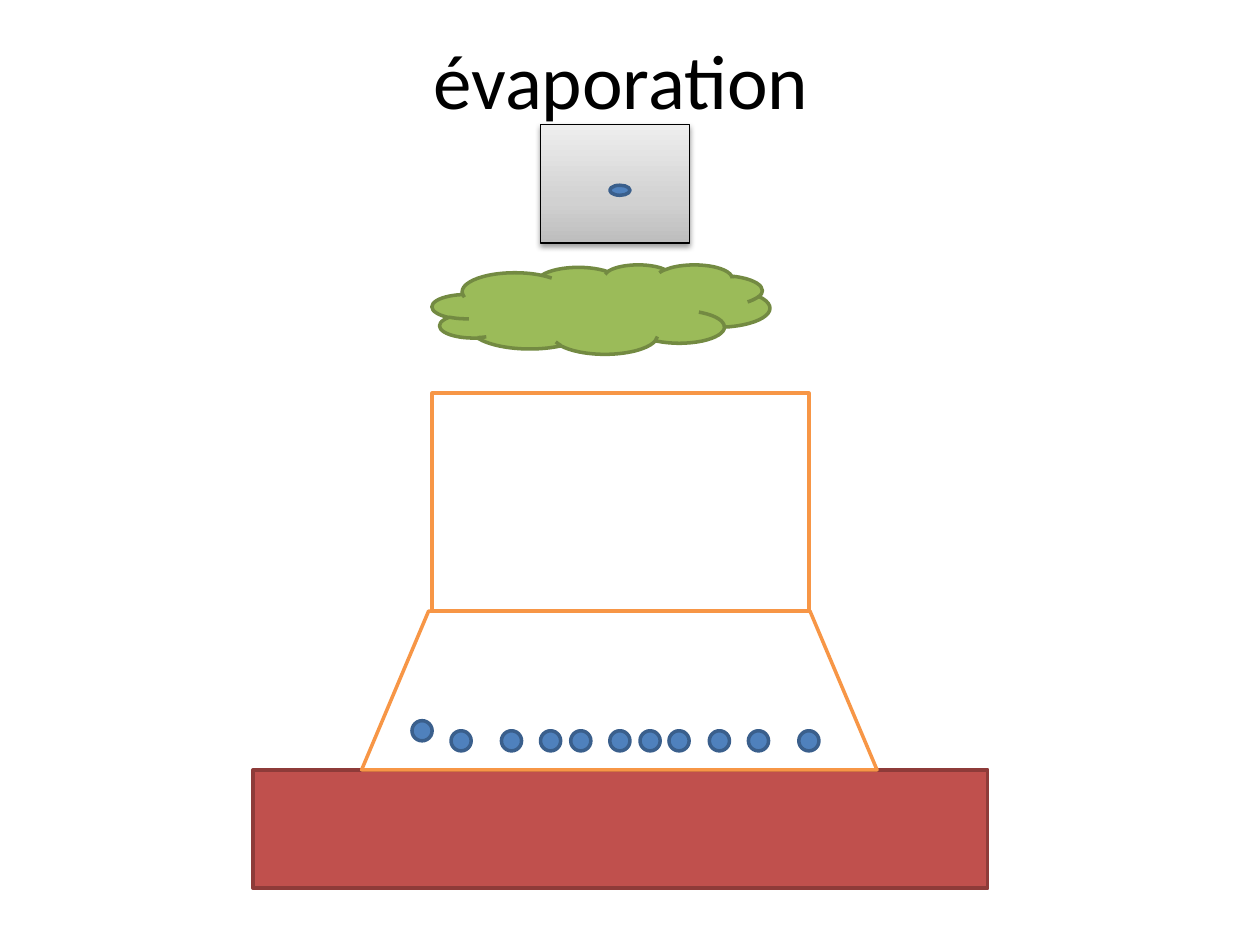
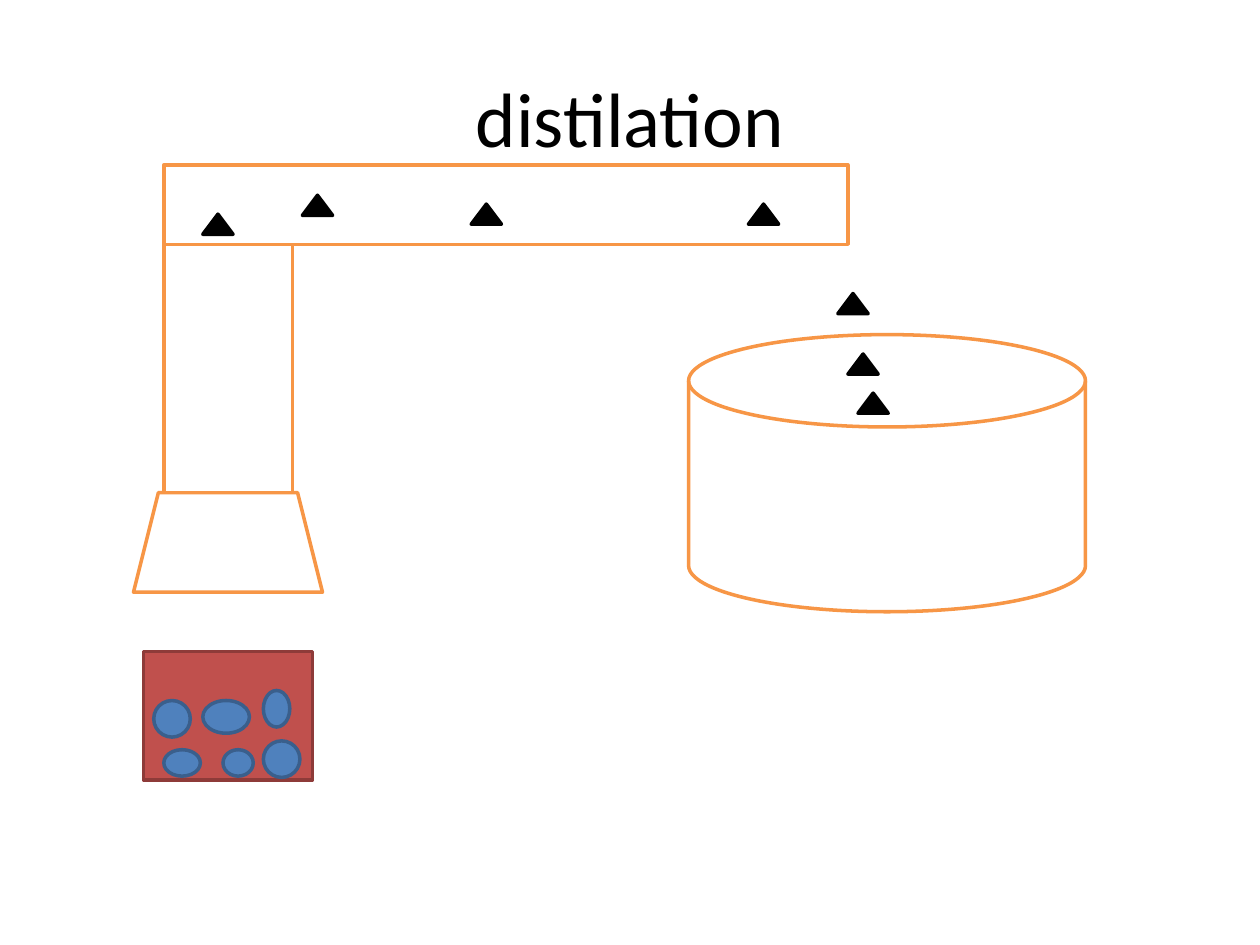
import pptx
import pptx.util
import pptx.dml.color
import pptx.enum.shapes
import pptx.enum.text
import pptx.oxml
import pptx.oxml.ns
import copy
from dataclasses import dataclass

Inches = pptx.util.Inches
Kind = pptx.enum.shapes.MSO_SHAPE


@dataclass(frozen=True)
class Theme:
    # Each look is a pair of fill and line colours
    heater: tuple = ("C0504D", "8E3B39")
    vessel: tuple = ("FFFFFF", "F79646")
    water: tuple = ("4F81BD", "3A5F8C")
    cloud: tuple = ("9BBB59", "738A42")
    vapour: tuple = ("000000", "000000")
    ink: str = "000000"
    steel: tuple = ((0, "BDBDBD"), (0.35, "D1D1D1"), (1, "EEEEEE"))
    font: str = "Calibri"
    title_size: int = 44
    outline: float = 2
    thin: float = 0.75


theme = Theme()
color = pptx.dml.color.RGBColor.from_string


def add_text(page, text, left, top, width, height, size=theme.title_size, ink=theme.ink):
    box = page.shapes.add_textbox(Inches(left), Inches(top), Inches(width), Inches(height))
    frame = box.text_frame
    frame.word_wrap = True
    frame.vertical_anchor = pptx.enum.text.MSO_ANCHOR.MIDDLE
    para = frame.paragraphs[0]
    para.alignment = pptx.enum.text.PP_ALIGN.CENTER
    span = para.add_run()
    span.text = text
    span.font.name = theme.font
    span.font.size = pptx.util.Pt(size)
    span.font.color.rgb = color(ink)


def add_part(page, kind, look, left, top, width, height):
    part = page.shapes.add_shape(kind, Inches(left), Inches(top), Inches(width), Inches(height))
    part.shadow.inherit = False
    fill, line = look
    part.fill.solid()
    part.fill.fore_color.rgb = color(fill)
    part.line.color.rgb = color(line)
    part.line.width = pptx.util.Pt(theme.outline)
    return part


deck = pptx.Presentation()
deck.slide_width = Inches(10)
deck.slide_height = Inches(7.5)
blank = deck.slide_layouts[6]

# Slide 1: evaporation
page = deck.slides.add_slide(blank)
add_text(page, "évaporation", 0.43, 0, 9, 1.25)

# Heater and vessel
add_part(page, Kind.RECTANGLE, theme.heater, 2.01, 6.11, 5.83, 0.94)
base = add_part(page, Kind.TRAPEZOID, theme.vessel, 2.87, 4.85, 4.09, 1.26)
base.adjustments[0] = 0.422
add_part(page, Kind.RECTANGLE, theme.vessel, 3.43, 3.12, 2.99, 1.73)

# Row of drops, the first one a little higher
drop = 0.16
add_part(page, Kind.OVAL, theme.water, 3.27, 5.72, drop, drop)
for left in (3.58, 3.98, 4.29, 4.53, 4.84, 5.08, 5.31, 5.63, 5.94, 6.34):
    add_part(page, Kind.OVAL, theme.water, left, 5.8, drop, drop)

# Steel plate with gradient and soft shadow
plate = add_part(page, Kind.RECTANGLE, theme.vessel, 4.29, 0.99, 1.18, 0.94)
plate.line.color.rgb = color(theme.ink)
plate.line.width = pptx.util.Pt(theme.thin)
plate.fill.gradient()
plate.fill.gradient_angle = 90
first_stop = plate._element.xpath(".//a:gs")[0]
first_stop.addnext(copy.deepcopy(first_stop))
for stop, (position, tone) in zip(plate.fill.gradient_stops, theme.steel):
    stop.position = position
    stop.color.rgb = color(tone)
plate._element.xpath(".//a:effectLst")[0].append(pptx.oxml.parse_xml(
    f'<a:outerShdw {pptx.oxml.ns.nsdecls("a")} blurRad="40000" dist="20000" dir="5400000" '
    f'rotWithShape="0"><a:srgbClr val="{theme.ink}"><a:alpha val="38000"/></a:srgbClr></a:outerShdw>'))

# Drop on the plate, and the cloud
add_part(page, Kind.OVAL, theme.water, 4.84, 1.47, drop, drop / 2)
add_part(page, Kind.CLOUD, theme.cloud, 3.43, 2.1, 2.68, 0.71)

# Slide 2: distillation
page = deck.slides.add_slide(blank)
add_text(page, "distilation", 0.5, 0.3, 9, 1.25)

# Heater, still, pipe and collecting drum
add_part(page, Kind.RECTANGLE, theme.heater, 1.14, 5.17, 1.34, 1.02)
add_part(page, Kind.TRAPEZOID, theme.vessel, 1.06, 3.91, 1.5, 0.79)
add_part(page, Kind.RECTANGLE, theme.vessel, 1.3, 1.94, 1.02, 1.97)
add_part(page, Kind.RECTANGLE, theme.vessel, 1.3, 1.31, 5.43, 0.63)
drum = add_part(page, Kind.FLOWCHART_DIRECT_ACCESS_STORAGE, theme.vessel, 5.94, 2.18, 2.2, 3.15)
drum.rotation = 270

# Bubbles in the heater
for bubble in (
    (2.09, 5.88, 0.29, 0.29),
    (1.22, 5.56, 0.29, 0.29),
    (1.3, 5.95, 0.29, 0.21),
    (2.09, 5.48, 0.21, 0.29),
    (1.61, 5.56, 0.37, 0.26),
    (1.77, 5.95, 0.24, 0.21),
):
    add_part(page, Kind.OVAL, theme.water, *bubble)

# Vapour along the pipe and falling into the drum
for left, top in ((1.61, 1.7), (2.4, 1.55), (3.74, 1.62), (5.94, 1.62),
                  (6.65, 2.33), (6.73, 2.81), (6.81, 3.12)):
    add_part(page, Kind.ISOSCELES_TRIANGLE, theme.vapour, left, top, 0.24, 0.16)

deck.save("out.pptx")
